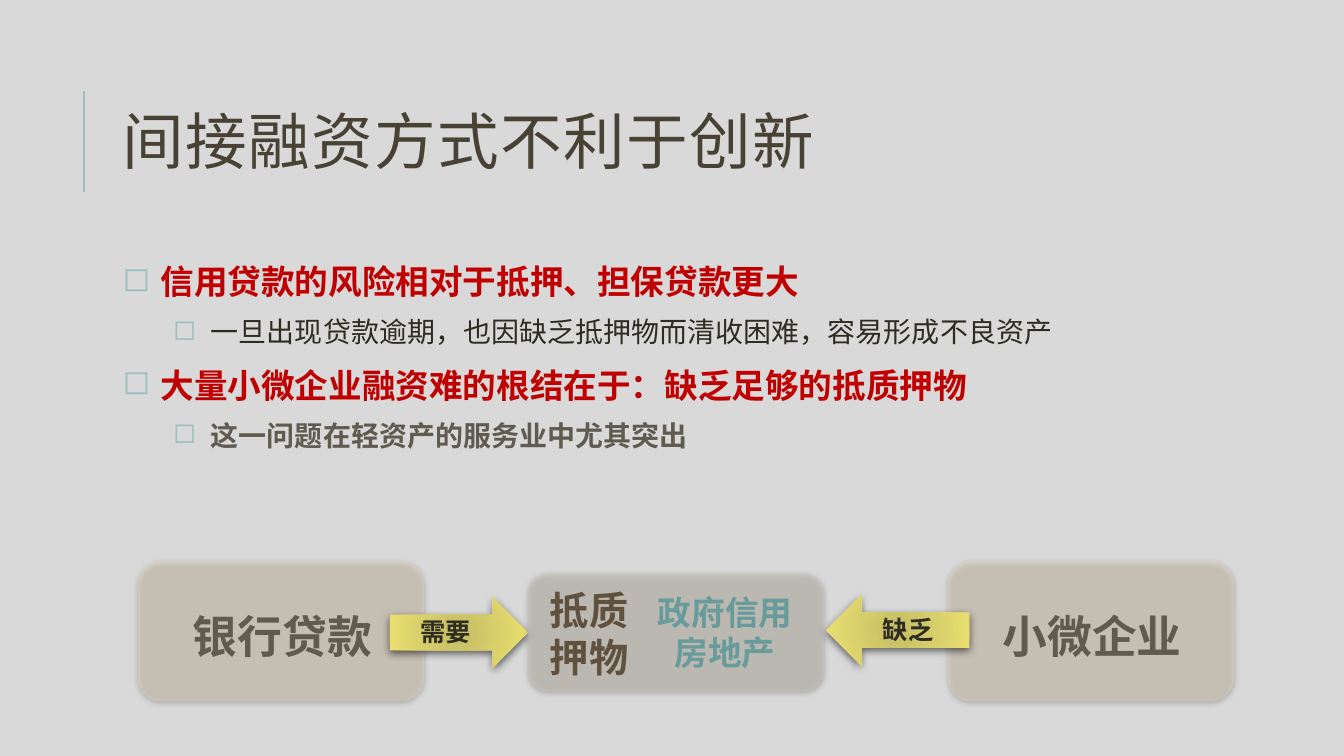
from lxml import etree
from pptx import Presentation
from pptx.dml.color import RGBColor
from pptx.enum.shapes import MSO_CONNECTOR as Connector, MSO_SHAPE as Shape
from pptx.enum.text import MSO_ANCHOR as Anchor, MSO_AUTO_SIZE as AutoSize, PP_ALIGN as Align
from pptx.oxml import parse_xml
from pptx.oxml.ns import nsdecls, qn
from pptx.util import Pt

BACKDROP = RGBColor(0xD9, 0xD9, 0xD9)
TEAL = RGBColor(0x9C, 0xBE, 0xBD)
DEEP_TEAL = RGBColor(0x68, 0x9C, 0x9A)
OLIVE = RGBColor(0x47, 0x42, 0x33)
GREY = RGBColor(0x60, 0x5B, 0x4F)
BROWN = RGBColor(0x5F, 0x51, 0x3E)
INK = RGBColor(0x2E, 0x2B, 0x21)
RED = RGBColor(0xC0, 0x00, 0x00)
SAND = RGBColor(0xE9, 0xD9, 0xBE)
STONE = RGBColor(0xD0, 0xC6, 0xB8)
DARK_YELLOW = RGBColor(0xC4, 0xBD, 0x65)
YELLOW = RGBColor(0xEC, 0xE2, 0x71)
CJK = "Noto Sans CJK SC"
LATIN = "Calibri"
HEADING = "Cabin"


class Deck:
    def __init__(self):
        self.show = Presentation()
        self.show.slide_width, self.show.slide_height = Pt(960), Pt(540)
        self.slide = self.show.slides.add_slide(self.show.slide_layouts[5])
        fill = self.slide.background.fill
        fill.solid()
        fill.fore_color.rgb = BACKDROP

    def run(self, paragraph, words, size, colour, font, bold=True):
        run = paragraph.add_run()
        run.text = words
        run.font.size, run.font.bold, run.font.name = Pt(size), bold, font
        run.font.color.rgb = colour
        return run

    def title(self, words, left, top, width, height):
        title = self.slide.shapes.title
        title.left, title.top, title.width, title.height = map(Pt, (left, top, width, height))
        title.text_frame.vertical_anchor = Anchor.MIDDLE
        paragraph = title.text_frame.paragraphs[0]
        paragraph.alignment, paragraph.line_spacing = Align.LEFT, 0.8
        run = self.run(paragraph, words, 44, OLIVE, HEADING, False)
        run.font._element.set("spc", "100")

    def rule(self, x, top, bottom):
        rule = self.slide.shapes.add_connector(Connector.STRAIGHT, Pt(x), Pt(bottom), Pt(x), Pt(top))
        rule.line.color.rgb, rule.line.width = TEAL, Pt(1.5)
        etree.SubElement(rule._element.spPr, qn("a:effectLst"))

    def frame(self, left, top, width, height, wrap=True):
        frame = self.slide.shapes.add_textbox(*map(Pt, (left, top, width, height))).text_frame
        frame.word_wrap, frame.auto_size = wrap, AutoSize.SHAPE_TO_FIT_TEXT
        return frame

    def label(self, words, box, size, colour, font=CJK, align=Align.LEFT, spacing=None, after=0, wrap=True):
        paragraph = self.frame(*box, wrap).paragraphs[0]
        paragraph.alignment, paragraph.line_spacing = align, spacing
        paragraph.space_after = Pt(after)
        self.run(paragraph, words, size, colour, font)

    def shadow(self, shape, blur, distance, alpha):
        shape.shadow.inherit = False
        effects = shape._element.spPr.find(qn("a:effectLst"))
        effects.append(parse_xml(
            f'<a:outerShdw {nsdecls("a")} blurRad="{Pt(blur)}" dist="{Pt(distance)}" dir="5400000" '
            f'rotWithShape="0"><a:srgbClr val="000000"><a:alpha val="{alpha}000"/></a:srgbClr></a:outerShdw>'))

    def card(self, left, top, width, height, colour):
        card = self.slide.shapes.add_shape(Shape.ROUNDED_RECTANGLE, *map(Pt, (left, top, width, height)))
        card.fill.solid()
        card.fill.fore_color.rgb = colour
        tint = card._element.spPr.find(qn("a:solidFill"))[0]
        etree.SubElement(tint, qn("a:alpha")).set("val", "40000")
        card.line.fill.background()
        self.shadow(card, 4, 1, 50)

    def arrow(self, left, top, width, height, rotation):
        arrow = self.slide.shapes.add_shape(Shape.DOWN_ARROW, *map(Pt, (left, top, width, height)))
        arrow.rotation = rotation
        arrow.fill.gradient()
        for stop, colour in zip(arrow.fill.gradient_stops, (DARK_YELLOW, YELLOW)):
            stop.color.rgb = colour
        gradient = arrow._element.spPr.find(qn("a:gradFill"))
        gradient.replace(gradient.find(qn("a:lin")), parse_xml(
            f'<a:path {nsdecls("a")} path="circle">'
            '<a:fillToRect l="100000" t="100000" r="100000" b="100000"/></a:path>'))
        arrow.line.fill.background()
        self.shadow(arrow, 6, 2, 60)

    def bullets(self, box, items):
        frame = self.frame(*box)
        for index, (level, words, size, colour, bold) in enumerate(items):
            paragraph = frame.paragraphs[0] if index == 0 else frame.add_paragraph()
            paragraph.level, paragraph.line_spacing = level, 1.4
            paragraph.space_before = Pt(0 if index else 5)
            props = paragraph._p.get_or_add_pPr()
            props.set("marL", str(Pt(27 + 36 * level)))
            props.set("indent", str(-Pt(27)))
            tint = etree.SubElement(props, qn("a:buClr"))
            etree.SubElement(tint, qn("a:srgbClr")).set("val", str(TEAL))
            etree.SubElement(props, qn("a:buChar")).set("char", "◻")
            self.run(paragraph, words, size, colour, LATIN, bold)


def main():
    deck = Deck()
    deck.rule(60, 65, 137)
    deck.title("间接融资方式不利于创新", 80.5, 46, 765.5, 118)

    for party, left in (("银行贷款", 98.5), ("小微企业", 677)):
        deck.card(left, 401, 204.5, 100, SAND)
        deck.label(party, (left + 32, 420, 211, 50), 32, GREY, align=Align.JUSTIFY, spacing=1.3)
    deck.arrow(302.5, 402.5, 50.5, 98.5, 270)
    deck.card(377.5, 409.5, 211, 84.5, STONE)
    deck.label("抵质押物", (380, 415.5, 81.5, 41), 28, BROWN, align=Align.CENTER, after=6)
    deck.label("政府信用 房地产", (448.5, 419, 139, 65.5), 24, DEEP_TEAL, align=Align.CENTER, after=6)
    deck.arrow(616, 399, 50.5, 102.5, 90)
    for link, left, top in (("需要", 293, 437), ("缺乏", 623.5, 435.5)):
        deck.label(link, (left, top, 51, 29), 18, INK, LATIN, wrap=False)

    deck.bullets((80.5, 171.5, 821.5, 156), (
        (0, "信用贷款的风险相对于抵押、担保贷款更大", 24, RED, True),
        (1, "一旦出现贷款逾期，也因缺乏抵押物而清收困难，容易形成不良资产", 20, INK, False),
        (0, "大量小微企业融资难的根结在于：缺乏足够的抵质押物", 24, RED, True),
        (1, "这一问题在轻资产的服务业中尤其突出", 20, GREY, True),
    ))
    deck.show.save("out.pptx")


if __name__ == "__main__":
    main()
